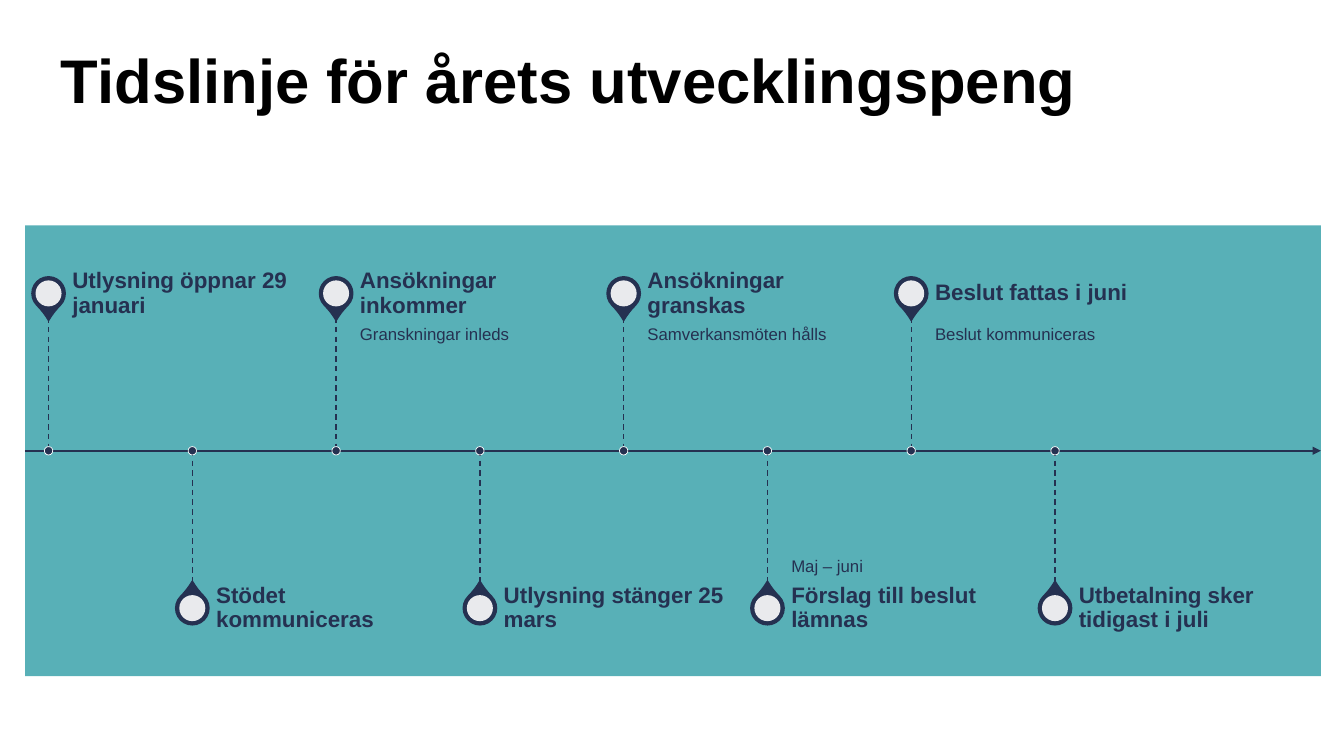
"""Build the yearly grant timeline slide."""
from lxml.etree import SubElement
from pptx import Presentation
from pptx.dml.color import RGBColor
from pptx.enum.dml import MSO_LINE as Dash
from pptx.enum.shapes import MSO_CONNECTOR as Link, MSO_SHAPE as Form
from pptx.enum.text import MSO_ANCHOR as Anchor, MSO_AUTO_SIZE as Fit, PP_ALIGN as Align
from pptx.oxml.ns import qn
from pptx.util import Pt

NAVY = RGBColor(0x25, 0x31, 0x51)
TEAL = RGBColor(0x58, 0xB0, 0xB7)
WHITE = RGBColor(0xFF, 0xFF, 0xFF)
BLACK = RGBColor(0, 0, 0)

LEFT, RIGHT, AXIS = 18, 943.5, 322
START, STEP = 34.7, 102.7
WIDE, HIGH = 171.4, 33.6
REACH = 95.4
STEPS = [
    ("Utlysning öppnar 29 januari", ""),
    ("Stödet kommuniceras", ""),
    ("Ansökningar inkommer", "Granskningar inleds"),
    ("Utlysning stänger 25 mars", ""),
    ("Ansökningar granskas", "Samverkansmöten hålls"),
    ("Förslag till beslut lämnas", "Maj – juni"),
    ("Beslut fattas i juni", "Beslut kommuniceras"),
    ("Utbetalning sker tidigast i juli", ""),
]


def write(frame, text, size=12, bold=False, color=NAVY, anchor=Anchor.TOP, pad=(0, 0, 0, 0)):
    frame.word_wrap = True
    frame.auto_size = Fit.NONE
    frame.vertical_anchor = anchor
    (frame.margin_left, frame.margin_top,
     frame.margin_right, frame.margin_bottom) = map(Pt, pad)
    line = frame.paragraphs[0]
    line.text = text
    line.alignment = Align.LEFT
    line.line_spacing = 0.9
    line.font.name = "Arial"
    line.font.size = Pt(size)
    line.font.bold = bold
    line.font.color.rgb = color


class Board:
    def __init__(self, slide):
        self.slide = slide
        self.ink = NAVY

    def title(self, text, x, y, w, h):
        box = self.slide.shapes.title
        box.left, box.top, box.width, box.height = map(Pt, (x, y, w, h))
        write(box.text_frame, text, size=44, bold=True, color=BLACK, pad=(6, 6, 6, 6))

    def shape(self, form, x, y, w, h, fill, edge=None, thick=1):
        item = self.slide.shapes.add_shape(form, Pt(x), Pt(y), Pt(w), Pt(h))
        item.shadow.inherit = False
        item.fill.solid()
        item.fill.fore_color.rgb = fill
        if edge is None:
            item.line.fill.background()
        else:
            item.line.color.rgb = edge
            item.line.width = Pt(thick)
        return item

    def disc(self, x, y, size, fill, **style):
        half = size / 2
        return self.shape(Form.OVAL, x - half, y - half, size, size, fill, **style)

    def line(self, x1, y1, x2, y2, thick=1, dash=False, arrow=False):
        item = self.slide.shapes.add_connector(Link.STRAIGHT, Pt(x1), Pt(y1), Pt(x2), Pt(y2))
        item.line.color.rgb = self.ink
        item.line.width = Pt(thick)
        if dash:
            item.line.dash_style = Dash.DASH
        props = item._element.spPr
        if arrow:
            SubElement(props.find(qn("a:ln")), qn("a:tailEnd"), type="triangle")
        SubElement(props, qn("a:effectLst"))

    def label(self, text, x, y, w, h, **style):
        box = self.slide.shapes.add_textbox(Pt(x), Pt(y), Pt(w), Pt(h))
        write(box.text_frame, text, color=self.ink, **style)

    def pin(self, x, y, turn):
        size = 23.8
        drop = self.shape(Form.TEAR, x - size / 2, y - size / 2, size, size, self.ink, edge=self.ink)
        drop.adjustments[0] = 1.15
        drop.rotation = turn
        core = self.disc(x, y, 18.6, WHITE)
        tint = core._element.spPr.find(qn("a:solidFill"))[0]
        SubElement(tint, qn("a:alpha"), val="90000")

    def event(self, x, head, note, above):
        edge = AXIS - REACH if above else AXIS + REACH
        top = edge - HIGH if above else edge
        self.pin(x, edge - 17 if above else edge + 17, 135 if above else 315)
        if note:
            self.label(note, x + 17, min(edge, AXIS), WIDE, REACH,
                       anchor=Anchor.TOP if above else Anchor.BOTTOM, pad=(0, 6, 6, 6))
        self.label(head, x + 17, top, WIDE, HIGH, size=16, bold=True,
                   anchor=Anchor.MIDDLE, pad=(0, 0, 8, 0))
        self.line(x, min(edge, AXIS), x, max(edge, AXIS), dash=True)
        self.disc(x, AXIS, 6, self.ink, edge=WHITE, thick=0.5)


def main():
    deck = Presentation()
    deck.slide_width, deck.slide_height = Pt(960), Pt(540)
    board = Board(deck.slides.add_slide(deck.slide_layouts[5]))
    board.title("Tidslinje för årets utvecklingspeng", 37.5, 30.2, 895, 126.7)
    board.shape(Form.RECTANGLE, LEFT, 161, RIGHT - LEFT, 322, TEAL)
    board.line(LEFT, AXIS, RIGHT, AXIS, thick=1.5, arrow=True)
    for i, (head, note) in enumerate(STEPS):
        board.event(START + i * STEP, head, note, above=i % 2 == 0)
    deck.save("out.pptx")


if __name__ == "__main__":
    main()
